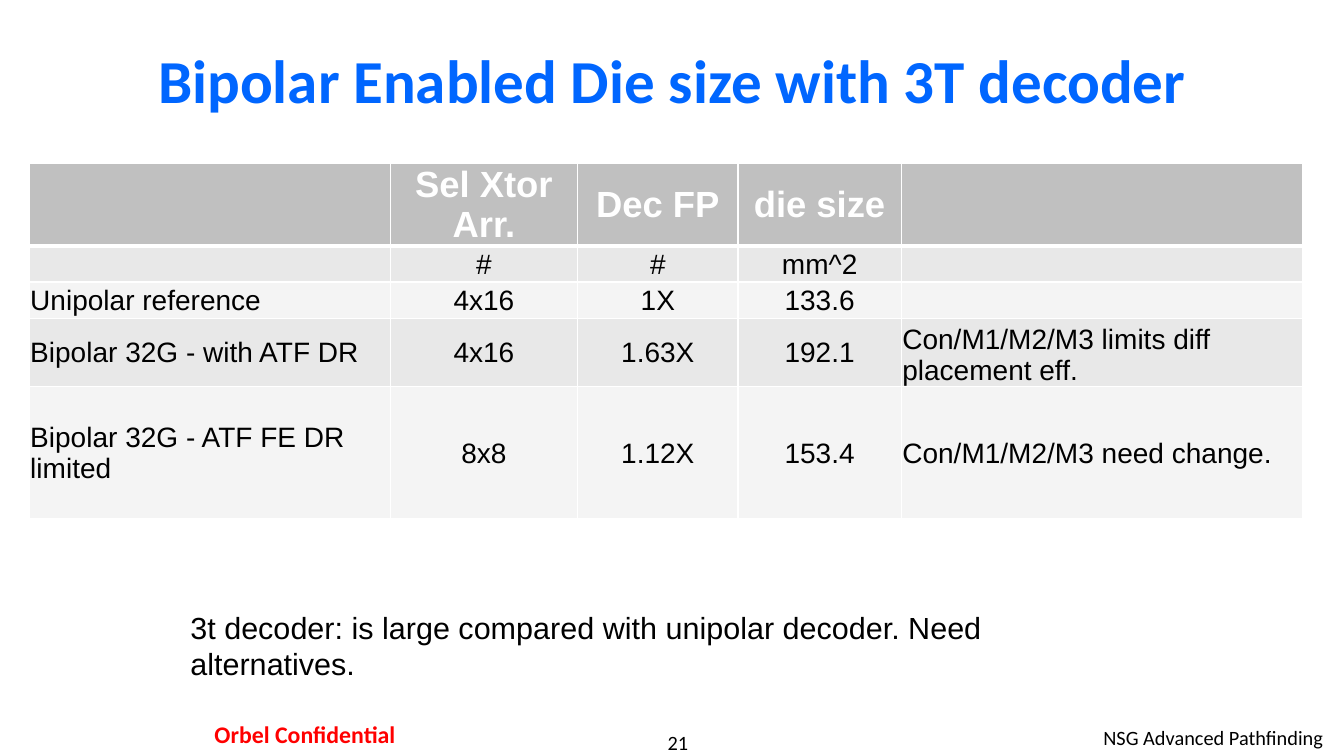
import pptx
import pptx.util
import pptx.dml.color
import pptx.enum.text
import pptx.oxml
import pptx.oxml.ns

Inches = pptx.util.Inches
Pt = pptx.util.Pt
RGB = pptx.dml.color.RGBColor
ALIGN = pptx.enum.text.PP_ALIGN
ANCHOR = pptx.enum.text.MSO_ANCHOR

BLACK = RGB(0, 0, 0)
WHITE = RGB(255, 255, 255)
RED = RGB(255, 0, 0)
BLUE = RGB(0x00, 0x66, 0xFF)
HEAD = RGB(0xC0, 0xC0, 0xC0)
BANDS = [RGB(0xF4, 0xF4, 0xF4), RGB(0xE8, 0xE8, 0xE8)]

COLS = [3.58, 1.86, 1.59, 1.62, 3.98]
HEIGHTS = [0.79, 0.36, 0.36, 0.68, 1.31]
ROWS = [
    ["", "Sel Xtor Arr.", "Dec FP", "die size", ""],
    ["", "#", "#", "mm^2", ""],
    ["Unipolar reference", "4x16", "1X", "133.6", ""],
    ["Bipolar 32G - with ATF DR", "4x16", "1.63X", "192.1",
     "Con/M1/M2/M3 limits diff placement eff."],
    ["Bipolar 32G - ATF FE DR limited", "8x8", "1.12X", "153.4",
     "Con/M1/M2/M3 need change."],
]


def write(frame, text, size, color, font="Calibri", bold=False,
          align=ALIGN.LEFT):
    frame.text = text
    para = frame.paragraphs[0]
    para.alignment = align
    for run in para.runs:
        run.font.name = font
        run.font.size = Pt(size)
        run.font.bold = bold
        run.font.color.rgb = color


def place(shape, box):
    shape.left, shape.top, shape.width, shape.height = map(Inches, box)


def add_text(slide, box, text, size, color, inset=(0.1, 0.05), **style):
    frame = slide.shapes.add_textbox(*map(Inches, box)).text_frame
    frame.word_wrap = True
    frame.margin_left = frame.margin_right = Inches(inset[0])
    frame.margin_top = frame.margin_bottom = Inches(inset[1])
    write(frame, text, size, color, **style)


def add_edges(cell, top, bottom):
    props = cell._tc.get_or_add_tcPr()
    for side, width in zip("LRTB", (1, 1, top, bottom)):
        props.append(pptx.oxml.parse_xml(
            f'<a:ln{side} {pptx.oxml.ns.nsdecls("a")} w="{Pt(width)}">'
            f'<a:solidFill><a:srgbClr val="{WHITE}"/></a:solidFill>'
            f'</a:ln{side}>'))


def fill_cell(cell, text, row, col):
    # Thick rule between the header and the body
    add_edges(cell, 3 if row == 1 else 1, 3 if row == 0 else 1)
    cell.fill.solid()
    cell.fill.fore_color.rgb = BANDS[row % 2] if row else HEAD
    cell.margin_left = cell.margin_right = cell.margin_top = Inches(0.01)
    cell.margin_bottom = 0
    cell.vertical_anchor = ANCHOR.MIDDLE
    size, color = (20, BLACK) if row else (26, WHITE)
    align = ALIGN.CENTER if 0 < col < 4 else ALIGN.LEFT
    write(cell.text_frame, text, size, color, "Arial", row == 0, align)


def add_grid(slide):
    box = (0.29, 1.62, sum(COLS), sum(HEIGHTS))
    table = slide.shapes.add_table(
        len(ROWS), len(COLS), *map(Inches, box)).table
    for col, width in zip(table.columns, COLS):
        col.width = Inches(width)
    for line, height in zip(table.rows, HEIGHTS):
        line.height = Inches(height)
    for row, texts in enumerate(ROWS):
        for col, text in enumerate(texts):
            fill_cell(table.cell(row, col), text, row, col)
    table.cell(3, 4).vertical_anchor = ANCHOR.BOTTOM


def main():
    deck = pptx.Presentation()
    deck.slide_width = Inches(13.33)
    deck.slide_height = Inches(7.5)
    slide = deck.slides.add_slide(deck.slide_layouts[5])

    # Title
    title = slide.shapes.title
    place(title, (1, 0.23, 11.33, 1.11))
    title.text_frame.vertical_anchor = ANCHOR.MIDDLE
    write(title.text_frame, "Bipolar Enabled Die size with 3T decoder",
          43.6, BLUE, bold=True, align=ALIGN.CENTER)

    # Die sizes and remark
    add_grid(slide)
    add_text(slide, (1.79, 5.99, 9.6, 0.47),
             "3t decoder: is large compared with unipolar decoder. "
             "Need alternatives.", 21.8, BLACK, font="Arial")

    # Footer
    add_text(slide, (5.56, 7.24, 2.33, 0.24), "21", 14.5, BLACK,
             inset=(0, 0), align=ALIGN.CENTER)
    add_text(slide, (8.83, 7.15, 4.39, 0.35), "NSG Advanced Pathfinding",
             14.5, BLACK, align=ALIGN.RIGHT)
    add_text(slide, (1.55, 7.08, 2.95, 0.41), "Orbel Confidential", 17, RED,
             inset=(0.12, 0.06), bold=True, align=ALIGN.CENTER)

    deck.save("out.pptx")


if __name__ == "__main__":
    main()
